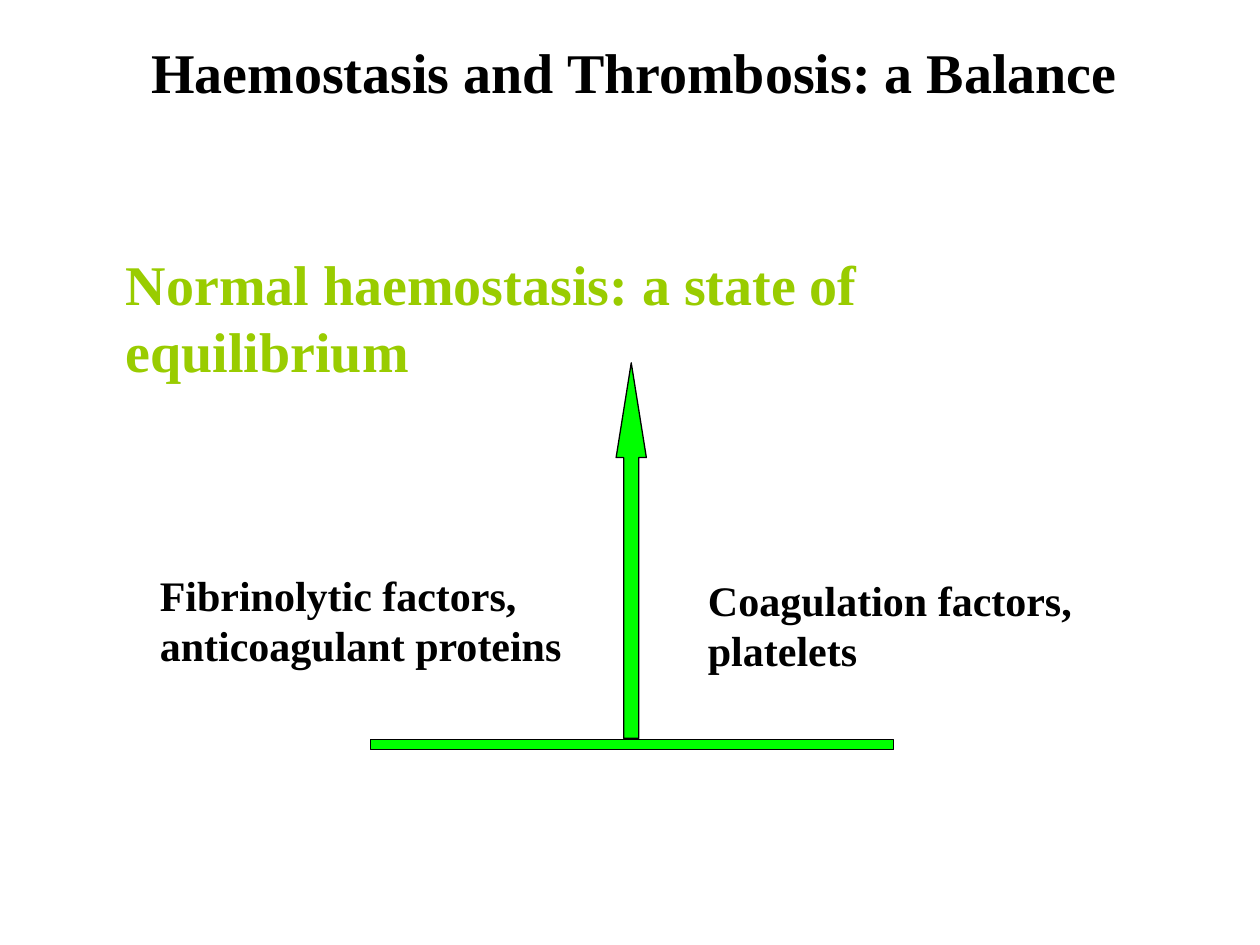
from pptx import Presentation
from pptx.dml.color import RGBColor
from pptx.enum.shapes import MSO_SHAPE
from pptx.util import Inches, Pt

COLORS = {"black": "000000", "green": "00FF00", "olive": "99CC00"}
FONT = "Times New Roman"


def rgb(name):
    return RGBColor.from_string(COLORS[name])


def write(tf, text, size=24, color="black", bold=True, wrap=False):
    tf.word_wrap = wrap
    for i, line in enumerate(text.split("\n")):
        p = tf.paragraphs[0] if i == 0 else tf.add_paragraph()
        r = p.add_run()
        r.text = line
        r.font.name = FONT
        r.font.size = Pt(size)
        r.font.bold = bold
        r.font.color.rgb = rgb(color)


class Builder:
    fill = "green"
    line = "black"
    line_width = 0.75

    def __init__(self, s):
        self.s = s

    def text(self, x, y, w, h, text, **fmt):
        box = self.s.shapes.add_textbox(Inches(x), Inches(y), Inches(w), Inches(h))
        write(box.text_frame, text, **fmt)

    def shape(self, kind, x, y, w, h, adjustments=()):
        sp = self.s.shapes.add_shape(kind, Inches(x), Inches(y), Inches(w), Inches(h))
        for i, value in enumerate(adjustments):
            sp.adjustments[i] = value
        sp.shadow.inherit = False
        sp.fill.solid()
        sp.fill.fore_color.rgb = rgb(self.fill)
        sp.line.color.rgb = rgb(self.line)
        sp.line.width = Pt(self.line_width)


def main():
    prs = Presentation()
    prs.slide_width, prs.slide_height = Inches(10), Inches(7.5)
    b = Builder(prs.slides.add_slide(prs.slide_layouts[6]))

    b.shape(MSO_SHAPE.UP_ARROW, 4.89, 2.88, 0.24, 2.98, (0.5, 3.13))
    b.shape(MSO_SHAPE.RECTANGLE, 2.94, 5.87, 4.15, 0.08)
    b.text(0.9, 1.93, 8.1, 1.17, "Normal haemostasis: a state of equilibrium",
           size=32, color="olive", wrap=True)
    b.text(5.52, 4.51, 3.09, 0.9, "Coagulation factors,\nplatelets")
    b.text(1.17, 4.47, 3.4, 0.9, "Fibrinolytic factors,\nanticoagulant proteins")
    b.text(1.1, 0.25, 7.88, 0.63, "Haemostasis and Thrombosis: a Balance", size=32)

    prs.save("out.pptx")


if __name__ == "__main__":
    main()
